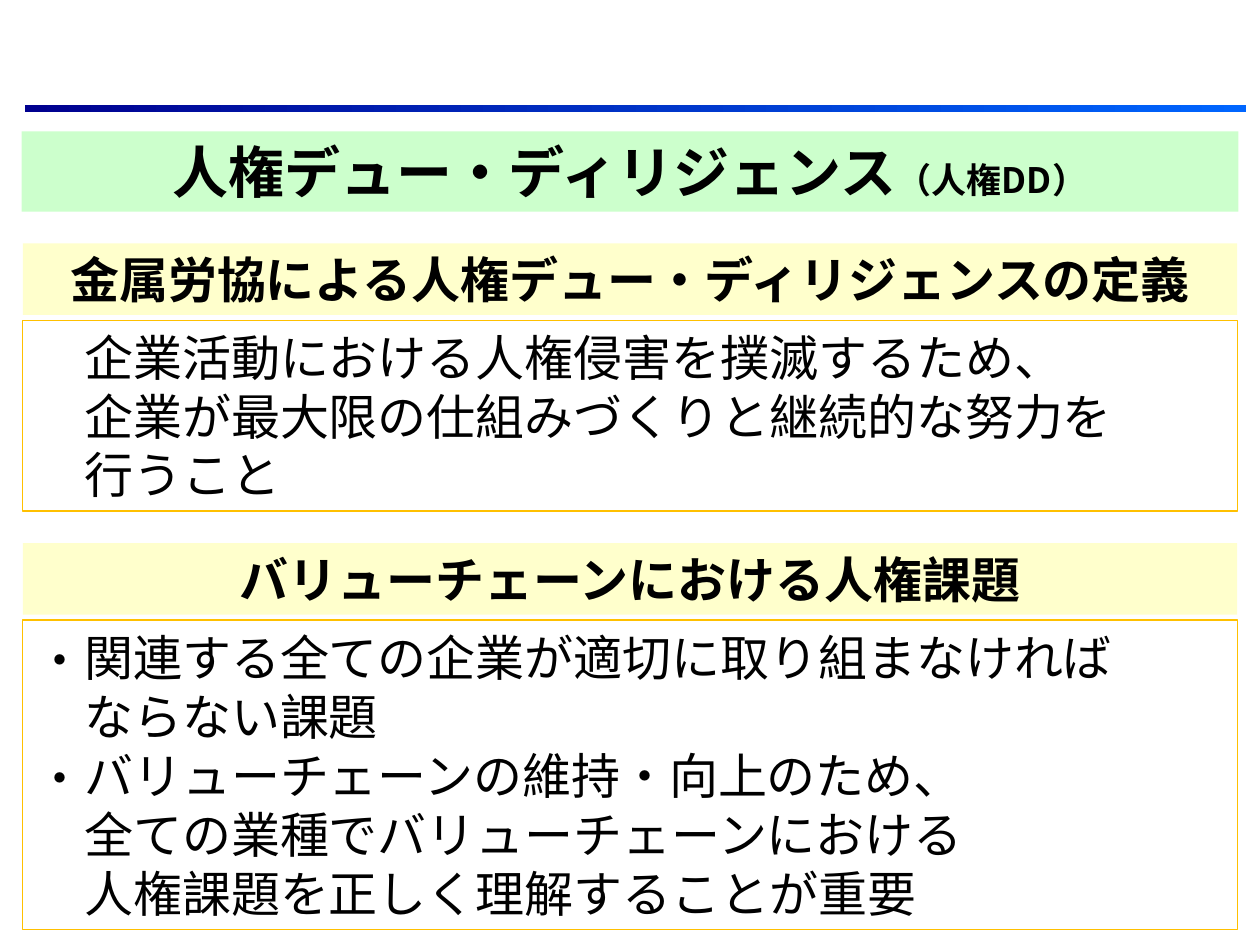
from lxml.etree import SubElement
from pptx import Presentation
from pptx.dml.color import RGBColor
from pptx.enum.shapes import MSO_SHAPE
from pptx.enum.text import MSO_ANCHOR, MSO_AUTO_SIZE, PP_ALIGN
from pptx.oxml.ns import qn
from pptx.util import Pt

COLORS = {"text": "000000", "title": "CCFFCC", "heading": "FFFFCC",
          "border": "FFC000", "bar_start": "00008F", "bar_end": "0066FF"}
FONT = "Noto Sans CJK JP"
BODY_SIZE = 28
LINE_RATIO = 1.2
LEFT, WIDTH = 13, 694
HEADING_HEIGHT, BOX_OFFSET = 41, 44

# Each section: heading, top, box height, bullet, paragraphs made of lines
SECTIONS = [
    ("金属労協による人権デュー・ディリジェンスの定義", 139, 109, None,
     [["企業活動における人権侵害を撲滅するため、",
       "企業が最大限の仕組みづくりと継続的な努力を",
       "行うこと"]]),
    ("バリューチェーンにおける人権課題", 310.3, 177, "・",
     [["関連する全ての企業が適切に取り組まなければ", "ならない課題"],
      ["バリューチェーンの維持・向上のため、",
       "全ての業種でバリューチェーンにおける",
       "人権課題を正しく理解することが重要"]]),
]


def color(name):
    return RGBColor.from_string(COLORS[name])


def place(sp, left, top, width, height):
    sp.left, sp.top, sp.width, sp.height = map(Pt, (left, top, width, height))
    tf = sp.text_frame
    tf.word_wrap = True
    tf.auto_size = MSO_AUTO_SIZE.NONE
    tf.vertical_anchor = MSO_ANCHOR.MIDDLE
    return tf


def add_run(p, text, size, bold=False):
    r = p.add_run()
    r.text = text
    r.font.size, r.font.bold, r.font.name = Pt(size), bold, FONT
    r.font.color.rgb = color("text")
    SubElement(r.font._element, qn("a:ea")).set("typeface", FONT)


def format_paragraph(p, size, align, margin=0, bullet=None):
    p.alignment = align
    p.line_spacing = Pt(size * LINE_RATIO)
    p.space_before = p.space_after = Pt(0)
    pPr = p._p.get_or_add_pPr()
    pPr.set("marL", str(Pt(margin)))
    pPr.set("indent", str(Pt(-margin if bullet else 0)))
    if bullet:
        SubElement(pPr, qn("a:buFont")).set("typeface", FONT)
        SubElement(pPr, qn("a:buChar")).set("char", bullet)
    else:
        SubElement(pPr, qn("a:buNone"))


def fill_band(sp, box, fill, runs):
    """Coloured band with one centred bold line of (text, size) runs."""
    p = place(sp, *box).paragraphs[0]
    sp.fill.solid()
    sp.fill.fore_color.rgb = color(fill)
    format_paragraph(p, runs[0][1], PP_ALIGN.CENTER)
    for text, size in runs:
        add_run(p, text, size, bold=True)


def fill_box(sp, box, bullet, paragraphs):
    """Outlined box with indented text, bulleted if a bullet is given."""
    tf = place(sp, *box)
    sp.line.color.rgb = color("border")
    sp.line.width = Pt(0.75)
    for i, lines in enumerate(paragraphs):
        p = tf.add_paragraph() if i else tf.paragraphs[0]
        format_paragraph(p, BODY_SIZE, PP_ALIGN.LEFT, BODY_SIZE, bullet)
        for j, line in enumerate(lines):
            if j:
                p.add_line_break()
            add_run(p, line, BODY_SIZE)


def add_gradient_bar(s):
    sp = s.shapes.add_shape(MSO_SHAPE.RECTANGLE,
                            Pt(14.4), Pt(60.3), Pt(697.6), Pt(3.8))
    sp.shadow.inherit = False
    sp.line.fill.background()
    sp.fill.gradient()
    sp.fill.gradient_angle = 0
    for stop, name in zip(sp.fill.gradient_stops, ("bar_start", "bar_end")):
        stop.color.rgb = color(name)


def main():
    prs = Presentation()
    prs.slide_width, prs.slide_height = Pt(720), Pt(540)
    # The Comparison layout has a title and two heading/body pairs
    s = prs.slides.add_slide(prs.slide_layouts[4])
    title, *bodies = s.placeholders

    # Rule and title
    add_gradient_bar(s)
    fill_band(title, (12.3, 75, 695.4, 46), "title",
              [("人権デュー・ディリジェンス", 32), ("（人権DD）", 20)])

    # Heading and text box of each section
    for i, (heading, top, height, bullet, paragraphs) in enumerate(SECTIONS):
        head, body = bodies[2 * i:2 * i + 2]
        fill_band(head, (LEFT, top, WIDTH, HEADING_HEIGHT), "heading",
                  [(heading, BODY_SIZE)])
        fill_box(body, (LEFT, top + BOX_OFFSET, WIDTH, height),
                 bullet, paragraphs)

    prs.save("out.pptx")


if __name__ == "__main__":
    main()
